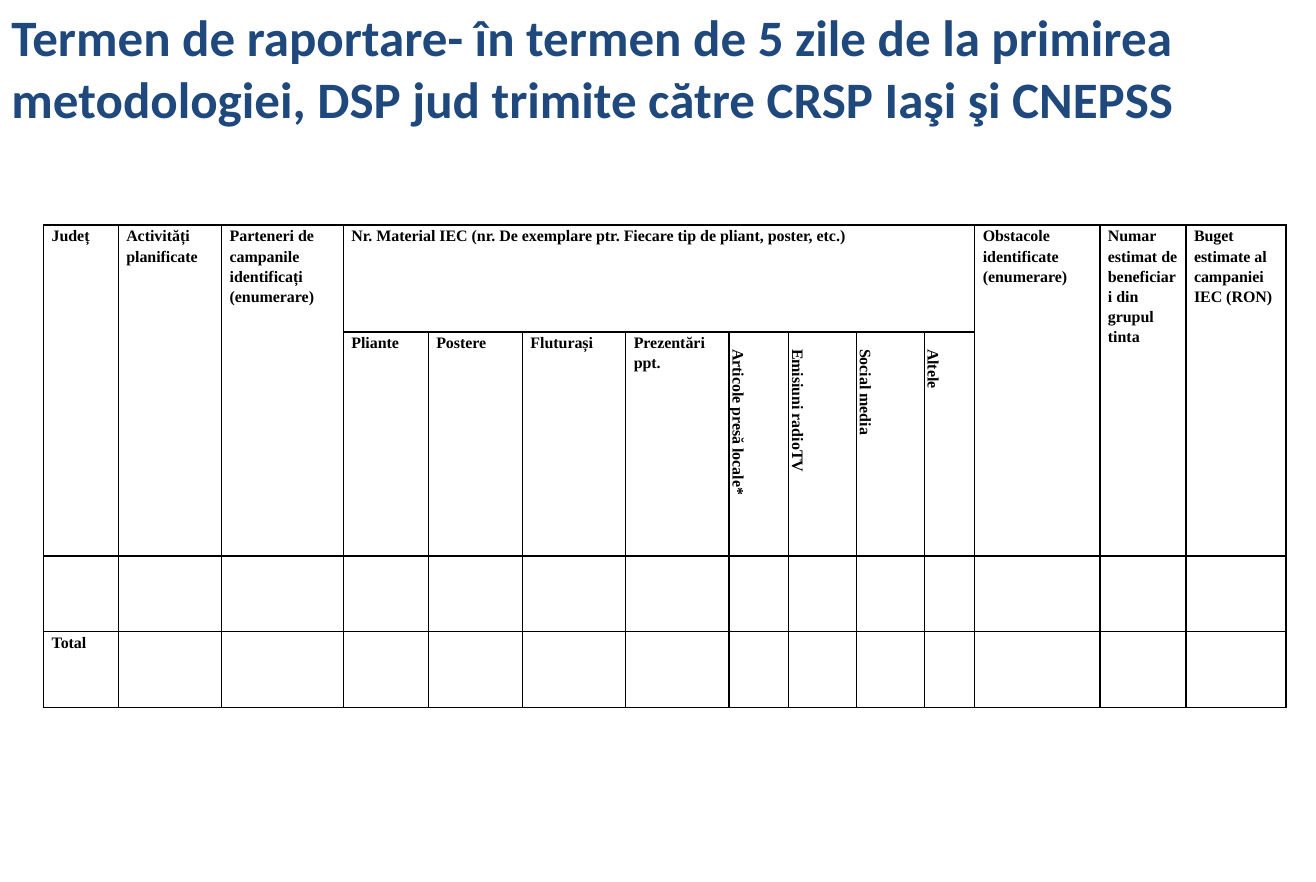
import pptx
import pptx.dml.color
import pptx.enum.text
import pptx.oxml
import pptx.oxml.ns
import pptx.util

Inches = pptx.util.Inches
NAVY = pptx.dml.color.RGBColor(0x1F, 0x49, 0x7D)
BLACK = pptx.dml.color.RGBColor(0, 0, 0)
WHITE = pptx.dml.color.RGBColor(255, 255, 255)

SLIDE_WIDTH, SLIDE_HEIGHT = 11.46, 7.68
COLUMN_WIDTHS = [0.65, 0.9, 1.06, 0.74, 0.82, 0.9, 0.9, 0.52, 0.59, 0.59, 0.44, 1.09, 0.75, 0.87]
ROW_HEIGHTS = [0.93, 1.95, 0.66, 0.66]
TABLE_LEFT, TABLE_TOP = 0.38, 1.96

HEADLINE = (
    "Termen de raportare- în termen de 5 zile de la primirea metodologiei, "
    "DSP jud trimite către CRSP Iaşi şi CNEPSS"
)
TALL_HEADINGS = {
    0: "Județ",
    1: "Activități planificate",
    2: "Parteneri de campanile identificați (enumerare)",
    11: "Obstacole identificate (enumerare)",
    12: "Numar estimat de beneficiari din grupul tinta",
    13: "Buget estimate al campaniei IEC (RON)",
}
MATERIALS_HEADING = "Nr. Material IEC (nr. De exemplare ptr. Fiecare tip de pliant, poster, etc.)"
PRINTED_MATERIALS = ["Pliante", "Postere", "Fluturași", "Prezentări ppt."]
MEDIA_CHANNELS = ["Articole presă locale*", "Emisiuni radioTV", "Social media", "Altele"]
FIRST_MATERIAL = 3


def write(paragraph, words, font_name, size, color):
    run = paragraph.add_run()
    run.text = words
    run.font.name = font_name
    run.font.size = pptx.util.Pt(size)
    run.font.bold = True
    run.font.color.rgb = color


def add_headline(slide):
    headline = slide.shapes.title
    headline.left = headline.top = 0
    headline.width, headline.height = Inches(SLIDE_WIDTH), Inches(1.21)
    frame = headline.text_frame
    frame.word_wrap = True
    frame.auto_size = pptx.enum.text.MSO_AUTO_SIZE.NONE
    frame.vertical_anchor = pptx.enum.text.MSO_ANCHOR.TOP
    paragraph = frame.paragraphs[0]
    paragraph.alignment = pptx.enum.text.PP_ALIGN.LEFT
    write(paragraph, HEADLINE, "Calibri", 32, NAVY)


def format_cell(cell):
    cell.margin_left = cell.margin_right = Inches(0.07)
    cell.margin_top = cell.margin_bottom = 0
    cell.fill.solid()
    cell.fill.fore_color.rgb = WHITE
    properties = cell._tc.get_or_add_tcPr()
    for position, side in enumerate(("lnL", "lnR", "lnT", "lnB")):
        border = pptx.oxml.parse_xml(
            f'<a:{side} {pptx.oxml.ns.nsdecls("a")} w="{pptx.util.Pt(1)}">'
            f'<a:solidFill><a:srgbClr val="{BLACK}"/></a:solidFill></a:{side}>'
        )
        properties.insert(position, border)


def label(cell, words, vertical=False):
    paragraph = cell.text_frame.paragraphs[0]
    paragraph.line_spacing = 1.15
    write(paragraph, words, "Times New Roman", 10, BLACK)
    if vertical:
        cell._tc.get_or_add_tcPr().set("vert", "vert")
        paragraph._p.get_or_add_pPr().set("marL", str(Inches(0.08)))


def add_report_table(slide):
    report = slide.shapes.add_table(
        len(ROW_HEIGHTS), len(COLUMN_WIDTHS),
        Inches(TABLE_LEFT), Inches(TABLE_TOP),
        Inches(sum(COLUMN_WIDTHS)), Inches(sum(ROW_HEIGHTS)),
    ).table
    report.first_row = report.horz_banding = False
    for column, width in zip(report.columns, COLUMN_WIDTHS):
        column.width = Inches(width)
    for row, height in zip(report.rows, ROW_HEIGHTS):
        row.height = Inches(height)
    for cell in report.iter_cells():
        format_cell(cell)

    for column, heading in TALL_HEADINGS.items():
        report.cell(0, column).merge(report.cell(1, column))
        label(report.cell(0, column), heading)

    materials = PRINTED_MATERIALS + MEDIA_CHANNELS
    last_material = FIRST_MATERIAL + len(materials) - 1
    report.cell(0, FIRST_MATERIAL).merge(report.cell(0, last_material))
    label(report.cell(0, FIRST_MATERIAL), MATERIALS_HEADING)
    for column, material in enumerate(materials, FIRST_MATERIAL):
        label(report.cell(1, column), material, vertical=material in MEDIA_CHANNELS)
    label(report.cell(3, 0), "Total")


def main():
    presentation = pptx.Presentation()
    presentation.slide_width = Inches(SLIDE_WIDTH)
    presentation.slide_height = Inches(SLIDE_HEIGHT)
    slide = presentation.slides.add_slide(presentation.slide_layouts.get_by_name("Title Only"))
    add_headline(slide)
    add_report_table(slide)
    presentation.save("out.pptx")


if __name__ == "__main__":
    main()
